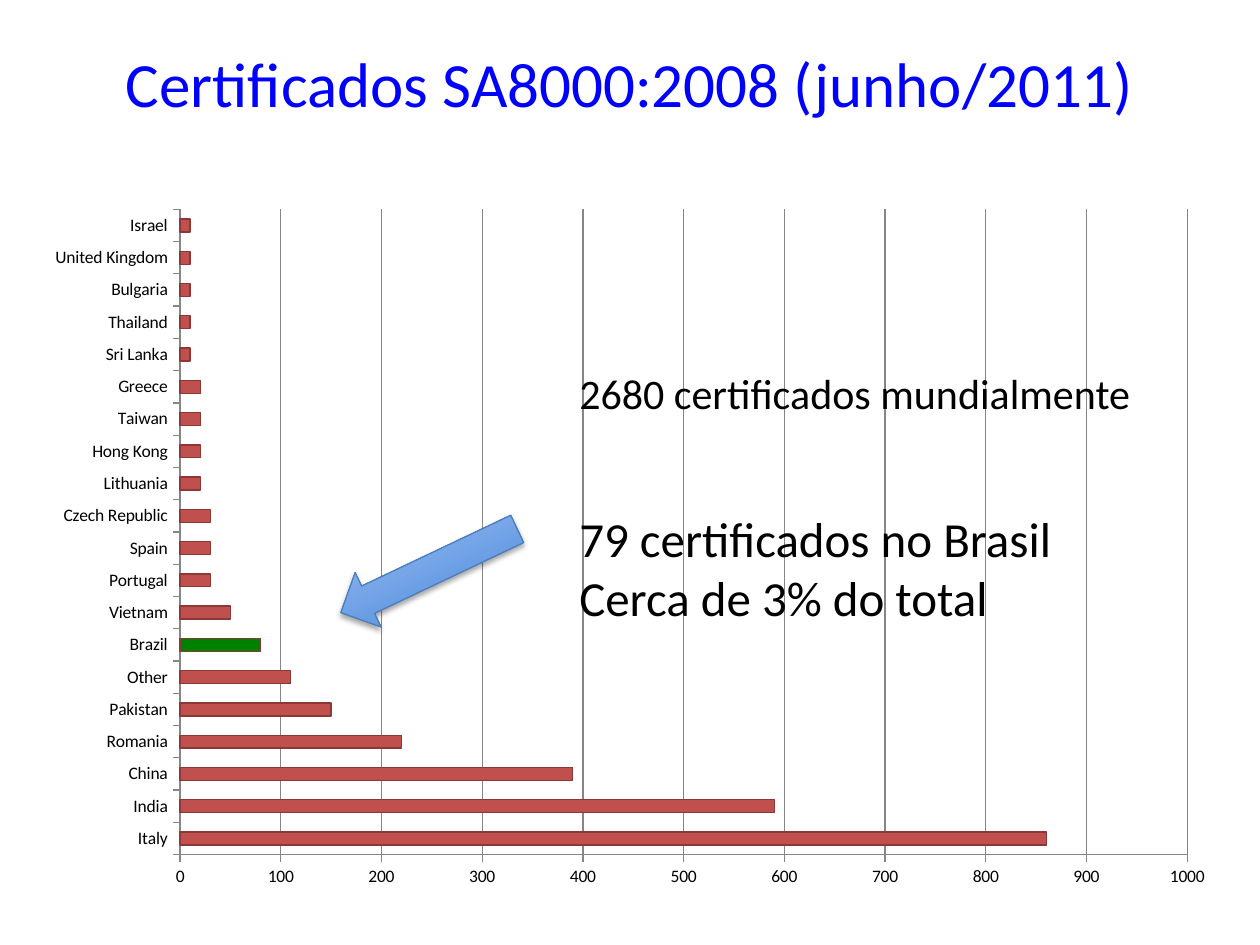
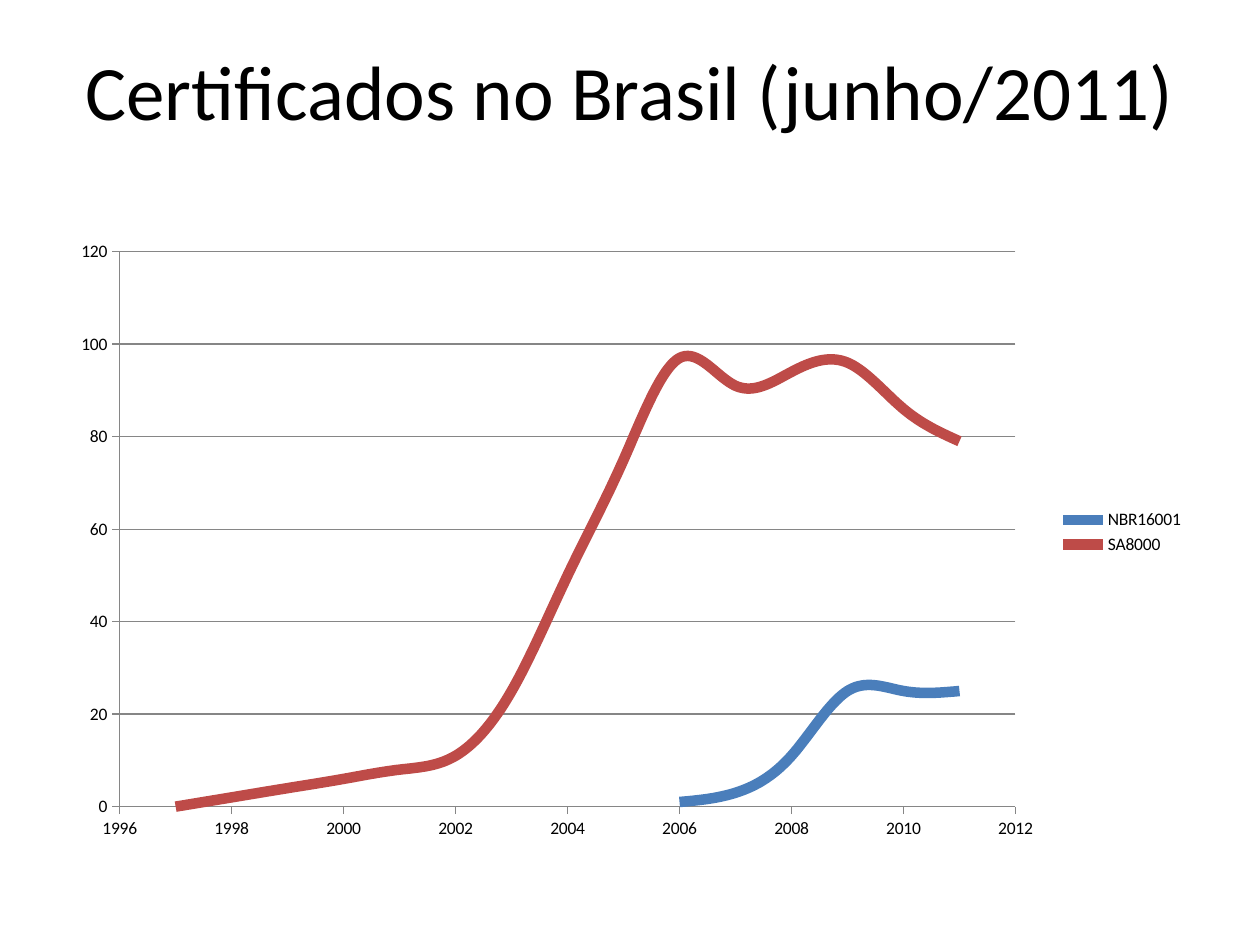
from dataclasses import dataclass
from lxml.etree import SubElement
from pptx import Presentation
from pptx.chart.data import CategoryChartData as BarData, XyChartData as XyData
from pptx.dml.color import RGBColor
from pptx.enum.chart import XL_CHART_TYPE as Kind, XL_LEGEND_POSITION as Place
from pptx.enum.chart import XL_TICK_MARK as Tick
from pptx.enum.shapes import MSO_SHAPE as Form
from pptx.enum.text import MSO_ANCHOR as Anchor, PP_ALIGN as Align
from pptx.oxml.ns import qn
from pptx.util import Inches, Pt


@dataclass(frozen=True)
class Theme:
    font: str = "Calibri"
    ink: str = "000000"
    title: str = "0000FF"
    axis: str = "868686"
    bar: str = "C0504D"
    edge: str = "8C3836"
    brazil: str = "008000"
    nbr: str = "4A7EBB"
    sa: str = "BE4B48"
    dark: str = "3F80CE"
    light: str = "A4C4FF"
    rim: str = "4B7EBC"
    tiny: int = 10
    note: int = 24
    fact: int = 28
    head: int = 36
    big: int = 44


T = Theme()
HEAD = (0.5, 0.3, 9, 1.25)

# Certificates per country, to the nearest ten
COUNTS = {
    "Italy": 860, "India": 590, "China": 390, "Romania": 220,
    "Pakistan": 150, "Other": 110, "Brazil": 80, "Vietnam": 50,
    "Portugal": 30, "Spain": 30, "Czech Republic": 30, "Lithuania": 20,
    "Hong Kong": 20, "Taiwan": 20, "Greece": 20, "Sri Lanka": 10,
    "Thailand": 10, "Bulgaria": 10, "United Kingdom": 10, "Israel": 10,
}
# Name: colour, yearly values from the first year on
FIRST = 1997
TRENDS = {
    "NBR16001": (T.nbr, [0] + [None] * 8 + [1, 3, 11, 25, 25, 25]),
    "SA8000": (T.sa, [0, 2, 4, 6, 8, 11, 25, 50, 75, 97, 91, 94, 96, 86, 79]),
}


def rgb(code):
    return RGBColor.from_string(code)


def inch(box):
    return [Inches(v) for v in box]


def style(font, size, color=T.ink):
    font.name, font.size = T.font, Pt(size)
    font.color.rgb = rgb(color)


def stroke(line, color, width=0.75):
    line.color.rgb, line.width = rgb(color), Pt(width)


def text(slide, box, lines, size, color=T.ink, align=Align.LEFT, wrap=False):
    frame = slide.shapes.add_textbox(*inch(box)).text_frame
    frame.word_wrap, frame.vertical_anchor = wrap, Anchor.TOP
    frame.text = "\n".join(lines)
    for para in frame.paragraphs:
        para.alignment = align
        style(para.font, size, color)


def title(slide, words, size, color=T.ink):
    text(slide, HEAD, [words], size, color, Align.CENTER, True)


def scale(axis, low, high, step):
    axis.minimum_scale, axis.maximum_scale, axis.major_unit = low, high, step


def layout(chart, plot):
    """Fix the inner plot area as fractions of the chart."""
    area = chart.plots[0]._element.getparent()
    for old in area.findall(qn("c:layout")):
        area.remove(old)
    outer = SubElement(area, qn("c:layout"))
    area.insert(0, outer)
    inner = SubElement(outer, qn("c:manualLayout"))
    pairs = [("layoutTarget", "inner"), ("xMode", "edge"), ("yMode", "edge")]
    for tag, val in pairs + list(zip("xywh", plot)):
        SubElement(inner, qn("c:" + tag)).set("val", str(val))


def graph(slide, box, kind, data):
    chart = slide.shapes.add_chart(kind, *inch(box), data).chart
    style(chart.font, T.tiny)
    chart.has_title = chart.has_legend = False
    chart.plots[0].vary_by_categories = False
    for axis in (chart.category_axis, chart.value_axis):
        axis.major_tick_mark, axis.minor_tick_mark = Tick.OUTSIDE, Tick.NONE
        axis.tick_labels.number_format = "General"
        axis.tick_labels.number_format_is_linked = False
        stroke(axis.format.line, T.axis)
    chart.category_axis.has_major_gridlines = False
    chart.value_axis.has_major_gridlines = True
    stroke(chart.value_axis.major_gridlines.format.line, T.axis)
    return chart


def bars(slide, box):
    data = BarData()
    data.categories = list(COUNTS)
    data.add_series("Series 1", list(COUNTS.values()))
    chart = graph(slide, box, Kind.BAR_CLUSTERED, data)
    scale(chart.value_axis, 0, 1000, 100)
    chart.plots[0].gap_width = 150
    row = chart.plots[0].series[0]
    point = row.points[list(COUNTS).index("Brazil")]
    for part, color in ((row, T.bar), (point, T.brazil)):
        part.format.fill.solid()
        part.format.fill.fore_color.rgb = rgb(color)
        stroke(part.format.line, T.edge)


def bend(row):
    """Smooth a curve and leave its missing years empty."""
    node = row._element
    for old in node.findall(qn("c:smooth")):
        node.remove(old)
    SubElement(node, qn("c:smooth")).set("val", "1")
    for point in list(node.find(qn("c:yVal")).iter(qn("c:pt"))):
        if point.findtext(qn("c:v")) in ("None", "", None):
            point.getparent().remove(point)


def curves(slide, box):
    data = XyData()
    for name, (_, vals) in TRENDS.items():
        row = data.add_series(name)
        for year, val in enumerate(vals, FIRST):
            row.add_data_point(year, val)
    chart = graph(slide, box, Kind.XY_SCATTER_SMOOTH_NO_MARKERS, data)
    layout(chart, (0.05, 0.05, 0.79, 0.89))
    scale(chart.category_axis, 1996, 2012, 2)
    scale(chart.value_axis, 0, 120, 20)
    for row in chart.plots[0].series:
        stroke(row.format.line, TRENDS[row.name][0], 6)
        bend(row)
    chart.has_legend = True
    chart.legend.position = Place.RIGHT
    chart.legend.include_in_layout = False


def arrow(slide, box):
    shape = slide.shapes.add_shape(Form.LEFT_ARROW, *inch(box))
    shape.rotation = 334.6
    shape.fill.gradient()
    shape.fill.gradient_angle = 90
    for stop, color in zip(shape.fill.gradient_stops, (T.dark, T.light)):
        stop.color.rgb = rgb(color)
    stroke(shape.line, T.rim)
    # Soft shadow straight below
    shape.shadow.inherit = False
    effects = shape._element.spPr.find(qn("a:effectLst"))
    shade = SubElement(effects, qn("a:outerShdw"), blurRad=str(Pt(3.1)),
                       dist=str(Pt(1.8)), dir="5400000", rotWithShape="0")
    tint = SubElement(shade, qn("a:srgbClr"), val=T.ink)
    SubElement(tint, qn("a:alpha"), val="35000")


def world(slide):
    title(slide, "Certificados SA8000:2008 (junho/2011)", T.head, T.title)
    bars(slide, (0.25, 1.55, 9.5, 5.6))
    text(slide, (4.5, 2.87, 4.63, 0.5), ["2680 certificados mundialmente"], T.note)
    text(slide, (4.5, 3.99, 4, 1.04),
         ["79 certificados no Brasil", "Cerca de 3% do total"], T.fact)
    arrow(slide, (2.63, 4.29, 1.55, 0.48))


def brazil(slide):
    title(slide, "Certificados no Brasil (junho/2011)", T.big)
    curves(slide, (0.5, 1.75, 9, 4.95))


def main():
    deck = Presentation()
    deck.slide_width, deck.slide_height = Inches(10), Inches(7.5)
    for build in (world, brazil):
        build(deck.slides.add_slide(deck.slide_layouts[6]))
    deck.save("out.pptx")


if __name__ == "__main__":
    main()
